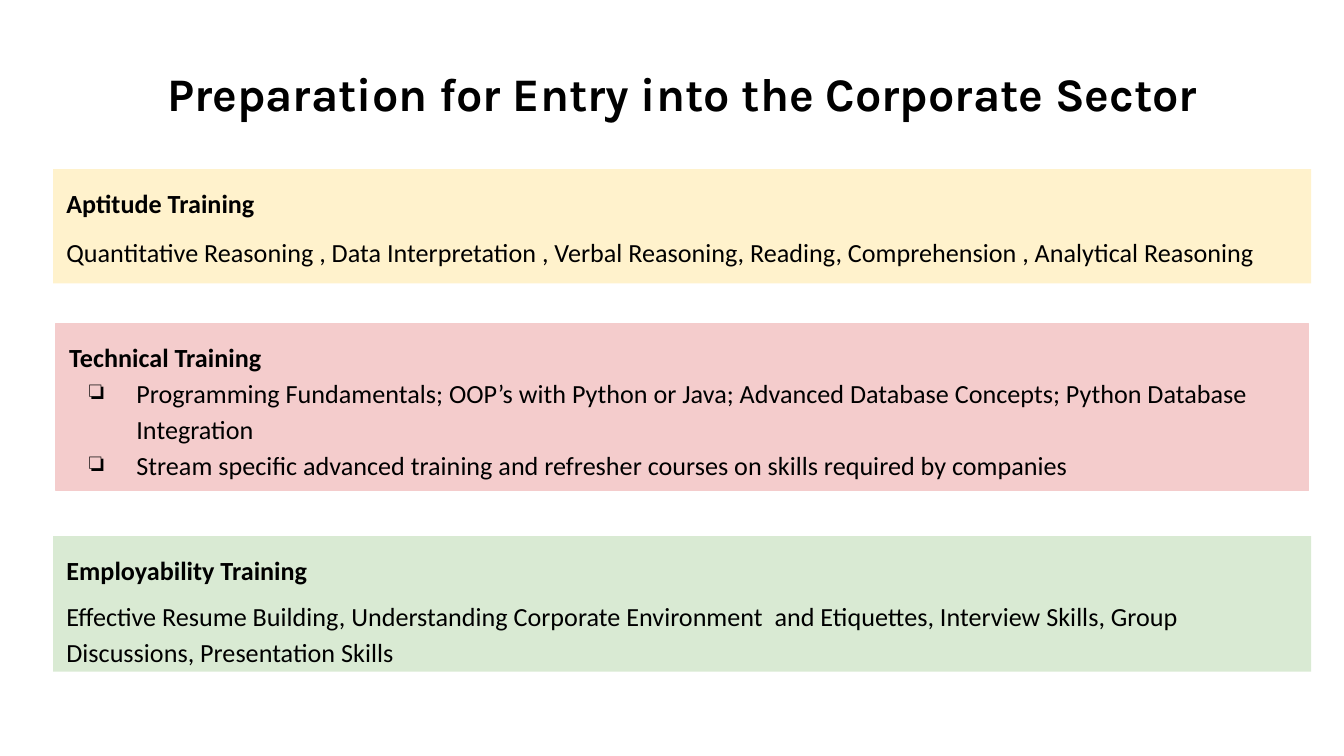
from dataclasses import dataclass

from lxml.etree import SubElement
from pptx import Presentation
from pptx.dml.color import RGBColor
from pptx.enum.shapes import MSO_SHAPE as ShapeType
from pptx.enum.text import MSO_ANCHOR as Anchor, PP_ALIGN as Align
from pptx.oxml.ns import qn
from pptx.util import Pt


@dataclass(frozen=True)
class Theme:
    text: str = "000000"
    yellow: str = "FFF2CC"
    red: str = "F4CCCC"
    green: str = "D9EAD3"
    title_font: str = "Karla"
    body_font: str = "Calibri"
    title_size: float = 25
    body_size: float = 14
    line_spacing: float = 1.15
    inset: float = 7.2
    bullet: str = "❏"


@dataclass(frozen=True)
class Panel:
    """One training area; lengths in points."""
    heading: str
    lines: tuple[str, ...]
    color: str
    left: float
    top: float
    width: float
    height: float
    gap: float = 0
    bulleted: bool = False
    outlined: bool = False


THEME = Theme()

PANELS = (
    Panel("Aptitude Training",
          ("Quantitative Reasoning , Data Interpretation , Verbal Reasoning, "
           "Reading, Comprehension , Analytical Reasoning",),
          THEME.yellow, 28.5, 90.6, 674, 61.2, gap=7),
    Panel("Technical Training",
          ("Programming Fundamentals; OOP’s with Python or Java; Advanced "
           "Database Concepts; Python Database Integration",
           "Stream specific advanced training and refresher courses on skills "
           "required by companies"),
          THEME.red, 30, 173.4, 671, 89.3, bulleted=True, outlined=True),
    Panel("Employability Training",
          ("Effective Resume Building, Understanding Corporate Environment  and "
           "Etiquettes, Interview Skills, Group Discussions, Presentation Skills",),
          THEME.green, 28.5, 287.2, 674, 72.6, gap=5.6),
)


def apply_format(target, values: dict) -> None:
    for name, value in values.items():
        setattr(target, name, value)


def set_up_frame(frame) -> None:
    inset = Pt(THEME.inset)
    apply_format(frame, {
        "word_wrap": True, "vertical_anchor": Anchor.TOP,
        "margin_left": inset, "margin_right": inset,
        "margin_top": inset, "margin_bottom": inset,
    })


def write(paragraph, text: str, font: str, size: float, bold: bool) -> None:
    run = paragraph.add_run()
    run.text = text
    apply_format(run.font, {"name": font, "size": Pt(size), "bold": bold})
    run.font.color.rgb = RGBColor.from_string(THEME.text)


def add_bullet(paragraph) -> None:
    properties = paragraph._p.get_or_add_pPr()
    properties.set("marL", str(Pt(36)))
    properties.set("indent", str(Pt(-25.2)))
    color = SubElement(properties, qn("a:buClr"))
    SubElement(color, qn("a:srgbClr"), val=THEME.text)
    SubElement(properties, qn("a:buChar"), char=THEME.bullet)


def add_title(slide, text: str) -> None:
    box = slide.shapes.add_textbox(Pt(30), Pt(27.4), Pt(671), Pt(37.4))
    set_up_frame(box.text_frame)
    paragraph = box.text_frame.paragraphs[0]
    paragraph.alignment = Align.CENTER
    write(paragraph, text, THEME.title_font, THEME.title_size, True)


def add_panel(slide, panel: Panel) -> None:
    shape = slide.shapes.add_shape(
        ShapeType.RECTANGLE, Pt(panel.left), Pt(panel.top),
        Pt(panel.width), Pt(panel.height))
    shape.shadow.inherit = False
    color = RGBColor.from_string(panel.color)
    shape.fill.solid()
    shape.fill.fore_color.rgb = color
    if panel.outlined:
        shape.line.color.rgb = color
        shape.line.width = Pt(0.75)
    else:
        shape.line.fill.background()

    # Heading first, then the body lines
    frame = shape.text_frame
    set_up_frame(frame)
    for index, text in enumerate((panel.heading, *panel.lines)):
        is_heading = index == 0
        paragraph = frame.paragraphs[0] if is_heading else frame.add_paragraph()
        apply_format(paragraph, {
            "alignment": Align.LEFT,
            "line_spacing": THEME.line_spacing,
            "space_before": Pt(0 if is_heading else panel.gap),
        })
        if panel.bulleted and not is_heading:
            add_bullet(paragraph)
        write(paragraph, text, THEME.body_font, THEME.body_size, is_heading)


def main() -> None:
    presentation = Presentation()
    apply_format(presentation, {"slide_width": Pt(720), "slide_height": Pt(405)})
    slide = presentation.slides.add_slide(presentation.slide_layouts[6])
    add_title(slide, "Preparation for Entry into the Corporate Sector")
    for panel in PANELS:
        add_panel(slide, panel)
    presentation.save("out.pptx")


if __name__ == "__main__":
    main()
